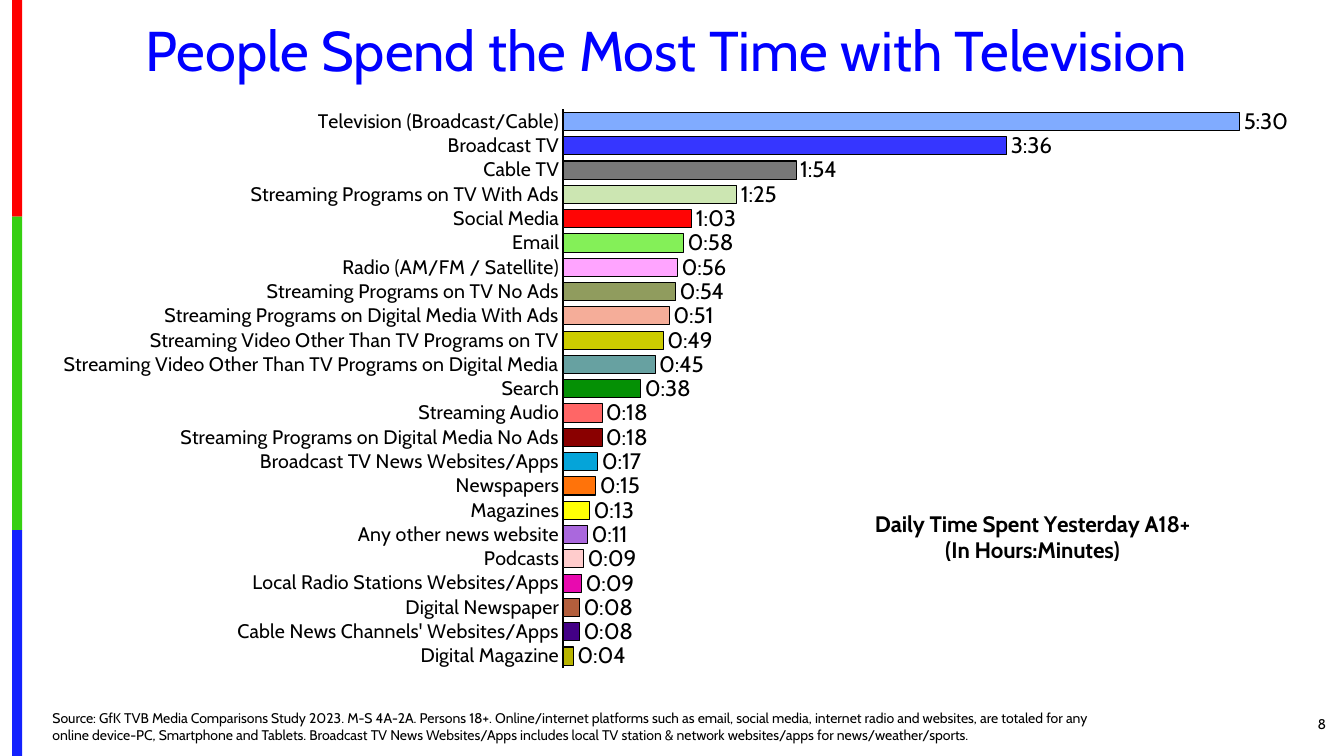
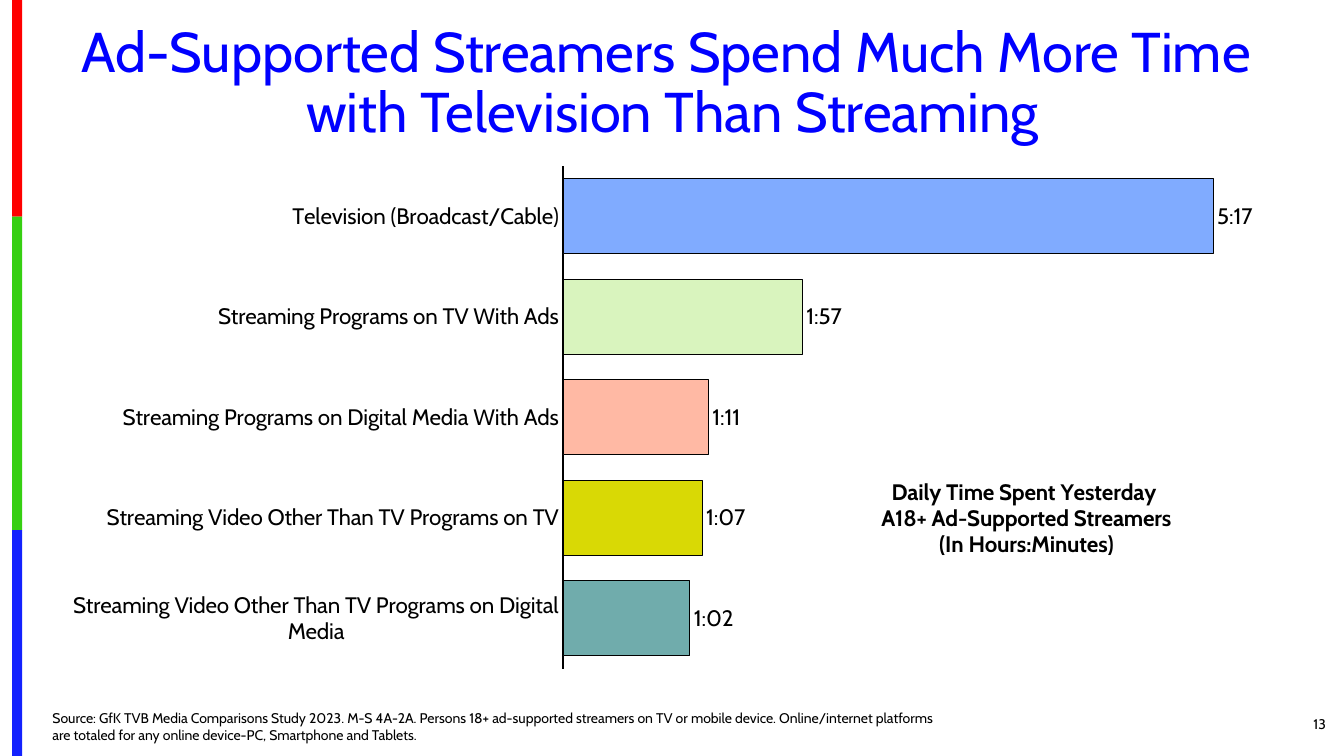
from lxml import etree
from pptx import Presentation
from pptx.chart.data import CategoryChartData
from pptx.dml.color import RGBColor
from pptx.enum.chart import XL_CHART_TYPE, XL_LABEL_POSITION, XL_TICK_MARK
from pptx.enum.shapes import MSO_SHAPE
from pptx.enum.text import MSO_ANCHOR, MSO_AUTO_SIZE, PP_ALIGN
from pptx.oxml.ns import qn
from pptx.util import Inches, Pt

BARS, OUTSIDE = XL_CHART_TYPE.BAR_CLUSTERED, XL_LABEL_POSITION.OUTSIDE_END
NO_TICK, RECT = XL_TICK_MARK.NONE, MSO_SHAPE.RECTANGLE
MID, LOW, NO_FIT = MSO_ANCHOR.MIDDLE, MSO_ANCHOR.BOTTOM, MSO_AUTO_SIZE.NONE
LEFT, MIDDLE, RIGHT = PP_ALIGN.LEFT, PP_ALIGN.CENTER, PP_ALIGN.RIGHT

WIDE, HIGH = 13.33, 7.5
THEME = {
    "face": "Cabin", "title": "0000FF", "text": "000000", "bar": "CCCCCC",
    "head": 40, "note": 10, "label": 16,
    "axis": 1.5, "edge": 0.75, "gap": 34,
}
BANDS = [("FE0000", 2.15), ("36CF12", 3.11), ("1322FE", 2.24)]
CHART = {"left": 0.25, "width": 12.92, "base": 6.67, "max": 0.25}
PLOT = {"x": 0.413, "y": 0.015, "w": 0.565, "h": 0.978}
FORMAT = "h:mm;@"

SLIDES = [
    {
        "title": "People Spend the Most Time with Television ",
        "head": (0.46, 0.17, 12.42, 0.71),
        "page": "8",
        "source": "Source: GfK TVB Media Comparisons Study 2023. M-S 4A-2A. Persons 18+. Online/internet platforms such as email, social media, internet radio and websites, are totaled for any online device-PC, Smartphone and Tablets. Broadcast TV News Websites/Apps includes local TV station & network websites/apps for news/weather/sports.",
        "foot": (0.42, 6.81, 10.71, 0.61),
        "top": 1, "size": 14,
        "key": "Daily Time Spent Yesterday A18+\n(In Hours:Minutes)",
        "spot": {"x": 0.65, "y": 0.71},
        "rows": [
            ("Television (Broadcast/Cable)", "5:31", "80ABFF"),
            ("Broadcast TV", "3:37", "3636FF"),
            ("Cable TV", "1:54", "787878"),
            ("Streaming Programs on TV With Ads", "1:25", "CCE6B2"),
            ("Social Media", "1:03", "FF0505"),
            ("Email", "0:59", "84F058"),
            ("Radio (AM/FM / Satellite)", "0:56", "FFA4FF"),
            ("Streaming Programs on TV No Ads", "0:55", "909C5E"),
            ("Streaming Programs on Digital Media With Ads", "0:52", "F5AD99"),
            ("Streaming Video Other Than TV Programs on TV", "0:49", "CCCC00"),
            ("Streaming Video Other Than TV Programs on Digital Media", "0:45", "67A1A1"),
            ("Search", "0:38", "059005"),
            ("Streaming Audio", "0:19", "FF6666"),
            ("Streaming Programs on Digital Media No Ads", "0:19", "8A0000"),
            ("Broadcast TV News Websites/Apps", "0:17", "05A4D9"),
            ("Newspapers", "0:16", "FF730A"),
            ("Magazines", "0:13", "FFFF05"),
            ("Any other news website", "0:12", "AA68DD"),
            ("Podcasts", "0:10", "FFCCCC"),
            ("Local Radio Stations Websites/Apps", "0:09", "E80AAF"),
            ("Digital Newspaper", "0:08", "B25E3C"),
            ("Cable News Channels' Websites/Apps", "0:08", "430086"),
            ("Digital Magazine", "0:05", "B8B400"),
        ],
    },
    {
        "title": "Ad-Supported Streamers Spend Much More Time \vwith Television Than Streaming",
        "head": (0.46, 0.18, 12.42, 1.31),
        "page": "13",
        "source": "Source: GfK TVB Media Comparisons Study 2023. M-S 4A-2A. Persons 18+ ad-supported streamers on TV or mobile device. Online/internet platforms are totaled for any online device-PC, Smartphone and Tablets.",
        "foot": (0.42, 6.98, 8.99, 0.44),
        "top": 1.57, "size": 16,
        "key": "Daily Time Spent Yesterday \nA18+ Ad-Supported Streamers\n(In Hours:Minutes)",
        "spot": {"x": 0.655, "y": 0.615},
        "rows": [
            ("Television (Broadcast/Cable)", "5:18", "80ABFF"),
            ("Streaming Programs on TV With Ads", "1:57", "D9F4BE"),
            ("Streaming Programs on Digital Media With Ads", "1:11", "FFB9A4"),
            ("Streaming Video Other Than TV Programs on TV", "1:08", "D9D905"),
            ("Streaming Video Other Than TV Programs on Digital Media", "1:02", "70ACAC"),
        ],
    },
]


def put(item, **vals):
    for name, val in vals.items():
        setattr(item, name, val)


def style(font, size, color=THEME["text"], bold=False):
    put(font, name=THEME["face"], size=Pt(size), bold=bold)
    font.color.rgb = RGBColor.from_string(color)


def paint(form, color):
    form.fill.solid()
    form.fill.fore_color.rgb = RGBColor.from_string(color)


def rule(line, width):
    line.color.rgb = RGBColor.from_string(THEME["text"])
    line.width = Pt(width)


def write(shape, box, text, size, color, align, anchor, lead=1.0):
    left, top, width, height = map(Inches, box)
    put(shape, left=left, top=top, width=width, height=height)
    frame = shape.text_frame
    frame.text = text
    put(frame, word_wrap=True, auto_size=NO_FIT, vertical_anchor=anchor)
    for para in frame.paragraphs:
        prop = para._p.get_or_add_pPr()
        for name in ("marL", "indent"):
            prop.set(name, "0")
        etree.SubElement(prop, qn("a:buNone"))
        put(para, alignment=align, line_spacing=lead, space_before=Pt(0))
        for run in para.runs:
            style(run.font, size, color)


def place(node, spot, index, inner=False):
    old = node.find(qn("c:layout"))
    if old is not None:
        node.remove(old)
    lay = etree.Element(qn("c:layout"))
    man = etree.SubElement(lay, qn("c:manualLayout"))
    vals = {"layoutTarget": "inner"} if inner else {}
    vals.update(xMode="edge", yMode="edge", **spot)
    for name, val in vals.items():
        etree.SubElement(man, qn("c:" + name)).set("val", str(val))
    node.insert(index, lay)


def share(time):
    hours, mins = map(int, time.split(":"))
    return round((hours * 60 + mins) / 1440, 6)


def draw(slide, page):
    names, times, tints = zip(*page["rows"])
    data = CategoryChartData(number_format=FORMAT)
    data.categories = names
    data.add_series("Series 1", [share(time) for time in times])
    box = (CHART["left"], page["top"], CHART["width"], CHART["base"] - page["top"])
    chart = slide.shapes.add_chart(BARS, *map(Inches, box), data).chart
    style(chart.font, THEME["note"])
    put(chart, has_legend=False, has_title=True)

    frame = chart.chart_title.text_frame
    frame.text = page["key"]
    for para in frame.paragraphs:
        for part in (para, *para.runs):
            style(part.font, THEME["label"], bold=True)
    root = chart.plots[0]._element.getparent()
    place(root.getparent().find(qn("c:title")), page["spot"], 1)
    place(root, PLOT, 0, True)

    axis = chart.category_axis
    put(axis, reverse_order=True, major_tick_mark=NO_TICK,
        minor_tick_mark=NO_TICK, has_major_gridlines=False)
    style(axis.tick_labels.font, page["size"])
    rule(axis.format.line, THEME["axis"])
    put(chart.value_axis, visible=False, has_major_gridlines=False,
        minimum_scale=0, maximum_scale=CHART["max"])

    plot = chart.plots[0]
    put(plot, gap_width=THEME["gap"], vary_by_categories=False, has_data_labels=True)
    put(plot.data_labels, show_value=True, position=OUTSIDE,
        number_format=FORMAT, number_format_is_linked=False)
    style(plot.data_labels.font, THEME["label"])
    bars = plot.series[0]
    bars.invert_if_negative = False
    paint(bars.format, THEME["bar"])
    for i, tint in enumerate(tints):
        form = bars.points[i].format
        paint(form, tint)
        rule(form.line, THEME["edge"])


def stripe(master, slide):
    top = 0
    for i, (color, height) in enumerate(BANDS):
        band = slide.shapes.add_shape(RECT, *map(Inches, (0.12, top, 0.1, height)))
        band.shadow.inherit = False
        paint(band, color)
        band.line.fill.background()
        node = band._element
        node.find(".//" + qn("p:cNvPr")).set("id", str(101 + i))
        master.shapes._spTree.append(node)
        top += height


def build(deck, page):
    slide = deck.slides.add_slide(deck.slide_layouts[1])
    write(slide.shapes.title, page["head"], page["title"],
          THEME["head"], THEME["title"], MIDDLE, MID, 0.9)
    write(slide.placeholders[1], page["foot"], page["source"],
          THEME["note"], THEME["text"], LEFT, LOW)
    box = (12.17, 6.98, 1.08, 0.4)
    write(slide.shapes.add_textbox(*map(Inches, box)), box, page["page"],
          THEME["note"], THEME["text"], RIGHT, MID)
    draw(slide, page)
    return slide


def main():
    deck = Presentation()
    put(deck, slide_width=Inches(WIDE), slide_height=Inches(HIGH))
    slides = [build(deck, page) for page in SLIDES]
    stripe(deck.slide_master, slides[0])
    deck.save("out.pptx")


if __name__ == "__main__":
    main()
